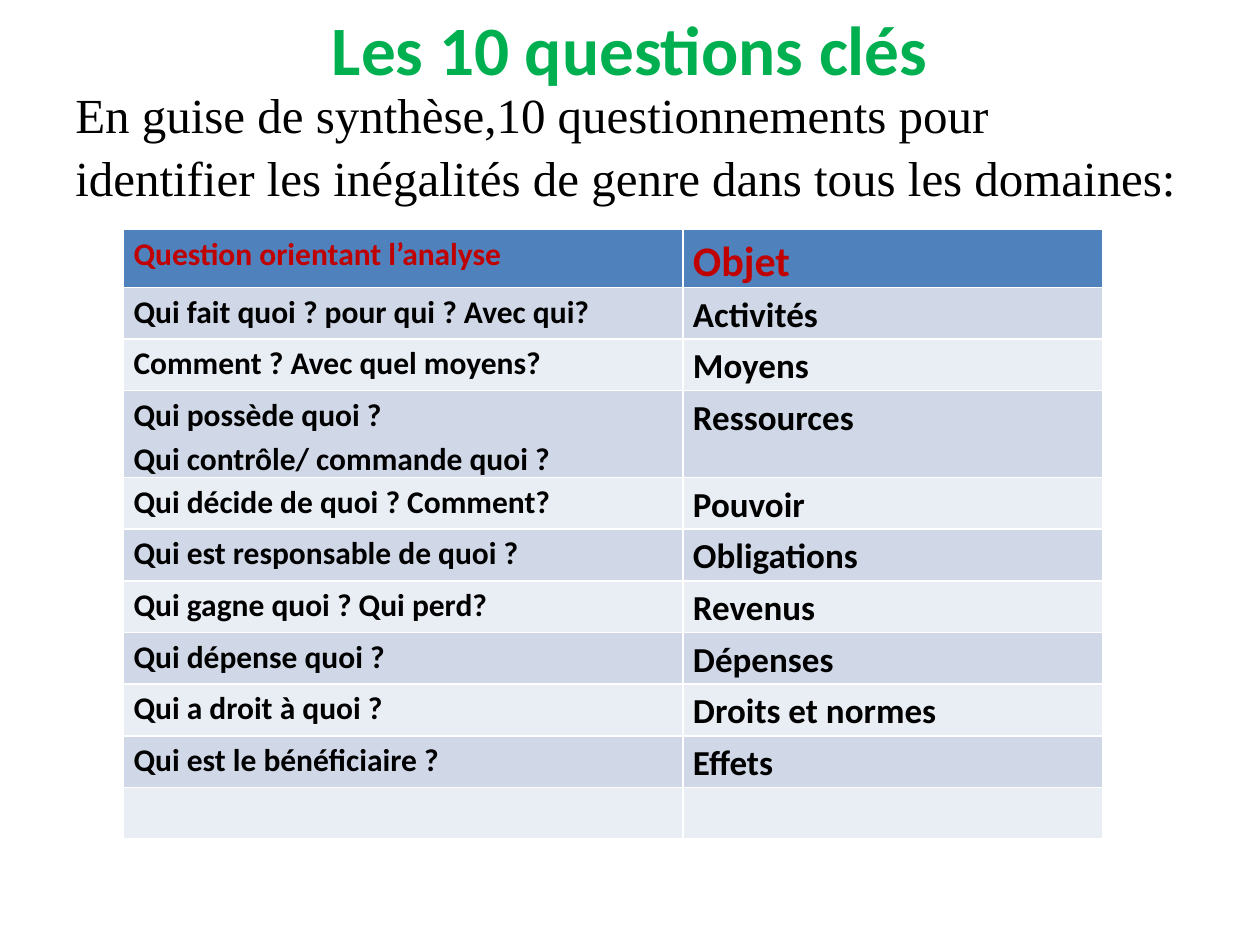
from lxml import etree
from pptx import Presentation
from pptx.dml.color import RGBColor
from pptx.enum.text import MSO_ANCHOR, PP_ALIGN
from pptx.oxml.ns import qn
from pptx.util import Inches, Pt

LEFT, CENTER, JUSTIFY = PP_ALIGN.LEFT, PP_ALIGN.CENTER, PP_ALIGN.JUSTIFY
TOP, MIDDLE = MSO_ANCHOR.TOP, MSO_ANCHOR.MIDDLE

WIDTH, HEIGHT = 10, 7.5
COLORS = {
    "title": "00B050",
    "text": "000000",
    "header_text": "C00000",
    "header": "4F81BD",
    "band_dark": "D0D8E8",
    "band_light": "E9EDF4",
    "border": "FFFFFF",
}

# Table grid: the two columns share the width 4 to 3
TABLE_LEFT, TABLE_TOP, TABLE_WIDTH = 0.98, 1.82, 7.77
COLUMN_SHARES = (4, 3)
ROW_HEIGHT = 0.41
CELL_MARGIN = 0.08

INTRO = [
    "En guise de synthèse,10 questionnements pour",
    "identifier les inégalités de genre dans tous les domaines:",
]
HEADER = (["Question orientant l’analyse"], ["Objet"])
QUESTIONS = [
    (["Qui fait quoi ? pour qui ? Avec qui?"], ["Activités"]),
    (["Comment ? Avec quel moyens?"], ["Moyens"]),
    (["Qui possède quoi ? ", "Qui contrôle/ commande quoi ?"], ["Ressources"]),
    (["Qui décide de quoi ? Comment?"], ["Pouvoir"]),
    (["Qui est responsable de quoi ?"], ["Obligations"]),
    (["Qui gagne quoi ? Qui perd?"], ["Revenus"]),
    (["Qui dépense quoi ?"], ["Dépenses"]),
    (["Qui a droit à quoi ?"], ["Droits et normes"]),
    (["Qui est le bénéficiaire ?"], ["Effets"]),
    ([], []),
]


def write_text(frame, lines, size, font="Calibri", color="text", bold=True,
               align=LEFT, spacing=1.0, before=0, hanging=0):
    """Fill a text frame with one paragraph per line."""
    for index, line in enumerate(lines):
        para = frame.add_paragraph() if index else frame.paragraphs[0]
        para.alignment = align
        para.line_spacing = spacing
        para.space_before = Pt(before)
        if hanging:
            properties = para._p.get_or_add_pPr()
            properties.set("marL", str(Inches(hanging)))
            properties.set("indent", str(-Inches(hanging)))
        span = para.add_run()
        span.text = line
        span.font.name = font
        span.font.size = Pt(size)
        span.font.bold = bold
        span.font.color.rgb = RGBColor.from_string(COLORS[color])


def add_text_box(page, left, top, width, height, lines, size, anchor=TOP, **style):
    """Place a wrapping text box, measured in shares of the slide."""
    box = page.shapes.add_textbox(
        Inches(left * WIDTH), Inches(top * HEIGHT),
        Inches(width * WIDTH), Inches(height * HEIGHT))
    box.text_frame.word_wrap = True
    box.text_frame.vertical_anchor = anchor
    write_text(box.text_frame, lines, size, **style)


def set_borders(cell, points=1):
    properties = cell._tc.get_or_add_tcPr()
    for index, side in enumerate(("lnL", "lnR", "lnT", "lnB")):
        line = etree.Element(qn(f"a:{side}"), w=str(Pt(points)))
        fill = etree.SubElement(line, qn("a:solidFill"))
        etree.SubElement(fill, qn("a:srgbClr"), val=COLORS["border"])
        properties.insert(index, line)


def format_cell(cell, lines, fill, size, **style):
    cell.margin_left = cell.margin_right = Inches(CELL_MARGIN)
    cell.margin_top = cell.margin_bottom = 0
    cell.fill.solid()
    cell.fill.fore_color.rgb = RGBColor.from_string(COLORS[fill])
    set_borders(cell)
    write_text(cell.text_frame, lines, size, align=JUSTIFY, spacing=1.15, **style)


def add_question_table(page):
    rows = [HEADER] + QUESTIONS
    table = page.shapes.add_table(
        len(rows), len(COLUMN_SHARES), Inches(TABLE_LEFT), Inches(TABLE_TOP),
        Inches(TABLE_WIDTH), Inches(ROW_HEIGHT * len(rows))).table
    table.first_row = table.horz_banding = False
    for column, share in zip(table.columns, COLUMN_SHARES):
        column.width = Inches(TABLE_WIDTH * share / sum(COLUMN_SHARES))

    for number, texts in enumerate(rows):
        table.rows[number].height = Inches(ROW_HEIGHT)
        if number == 0:
            fill, color, sizes = "header", "header_text", (18, 24)
        else:
            fill = "band_dark" if number % 2 else "band_light"
            color, sizes = "text", (18, 20)
        for column, (lines, size) in enumerate(zip(texts, sizes)):
            format_cell(table.cell(number, column), lines, fill, size, color=color)


def main():
    deck = Presentation()
    deck.slide_width, deck.slide_height = Inches(WIDTH), Inches(HEIGHT)
    page = deck.slides.add_slide(deck.slide_layouts[6])

    # Title and introduction
    add_text_box(page, 0.05, 0, 0.9, 0.1, ["Les 10 questions clés"], 39.6,
                 anchor=MIDDLE, color="title", align=CENTER)
    add_text_box(page, 0.05, 0.09, 0.9, 0.15, INTRO, 28, font="Times New Roman",
                 bold=False, spacing=0.9, before=5.6, hanging=0.38)

    # Questions and what each one looks at
    add_question_table(page)

    deck.save("out.pptx")


if __name__ == "__main__":
    main()
